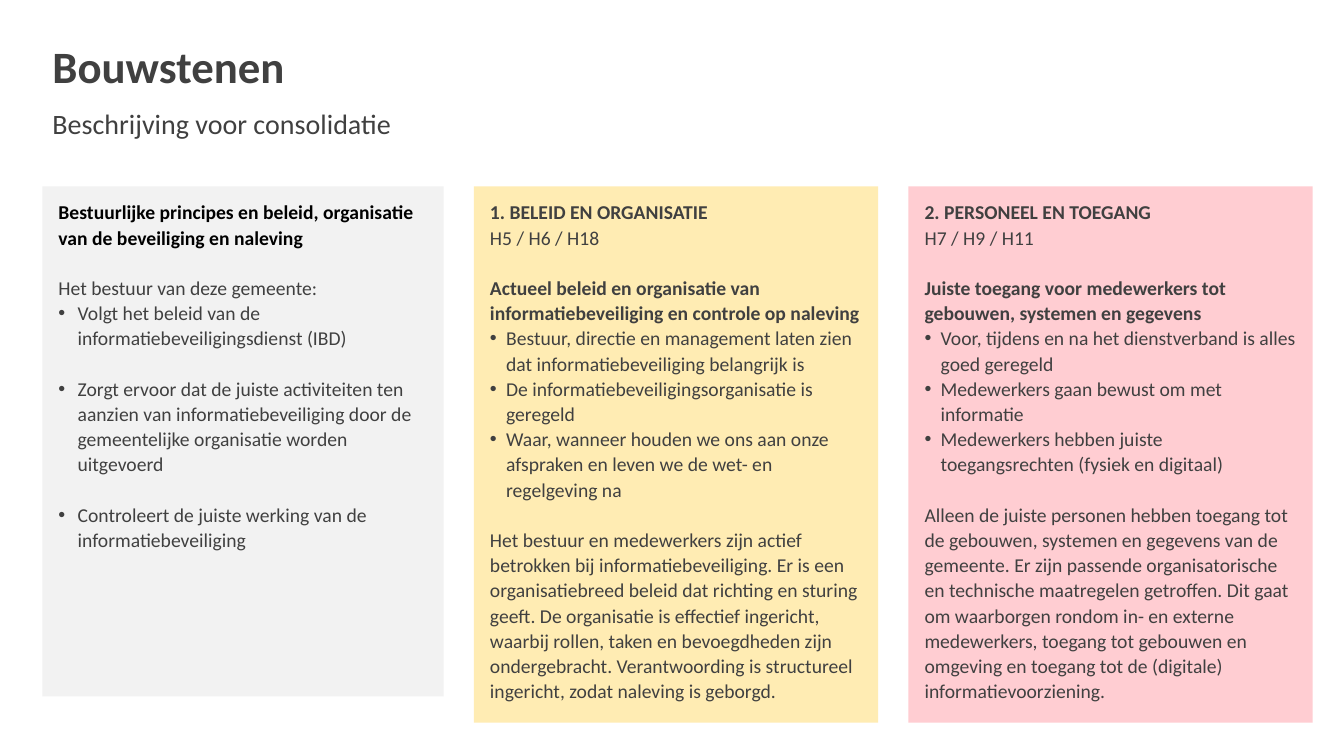
from dataclasses import dataclass

from lxml import etree
from pptx import Presentation
from pptx.dml.color import RGBColor
from pptx.enum import shapes, text
from pptx.oxml import ns
from pptx.util import Inches, Pt


@dataclass(frozen=True)
class Theme:
    font: str = "Calibri"
    ink: str = "404040"
    black: str = "000000"
    grey: str = "F2F2F2"
    yellow: str = "FFECB3"
    pink: str = "FFCDD2"
    title_size: int = 32
    subtitle_size: int = 20
    body_size: int = 14
    title_line: int = 34
    body_line: int = 18


THEME = Theme()


@dataclass(frozen=True)
class Line:
    content: str
    bold: bool = False
    bullet: bool = False
    gap_after: bool = False
    color: str = THEME.ink


@dataclass(frozen=True)
class Panel:
    fill: str
    width: float
    height: float
    bullet_indent: float
    lines: tuple[Line, ...]


PANEL_LEFT, PANEL_TOP, PANEL_GAP = 0.42, 1.85, 0.3

PANELS = (
    Panel(THEME.grey, 3.98, 5.06, 0.19, (
        Line("Bestuurlijke principes en beleid, organisatie van de beveiliging en naleving",
             bold=True, gap_after=True, color=THEME.black),
        Line("Het bestuur van deze gemeente:"),
        Line("Volgt het beleid van de informatiebeveiligingsdienst (IBD)",
             bullet=True, gap_after=True),
        Line("Zorgt ervoor dat de juiste activiteiten ten aanzien van informatiebeveiliging "
             "door de gemeentelijke organisatie worden uitgevoerd", bullet=True, gap_after=True),
        Line("Controleert de juiste werking van de informatiebeveiliging", bullet=True),
    )),
    Panel(THEME.yellow, 4.01, 5.32, 0.16, (
        Line("1. BELEID EN ORGANISATIE", bold=True),
        Line("H5 / H6 / H18", gap_after=True),
        Line("Actueel beleid en organisatie van informatiebeveiliging en controle op naleving",
             bold=True),
        Line("Bestuur, directie en management laten zien dat informatiebeveiliging belangrijk is",
             bullet=True),
        Line("De informatiebeveiligingsorganisatie is geregeld", bullet=True),
        Line("Waar, wanneer houden we ons aan onze afspraken en leven we de wet- en "
             "regelgeving na", bullet=True, gap_after=True),
        Line("Het bestuur en medewerkers zijn actief betrokken bij informatiebeveiliging. "
             "Er is een organisatiebreed beleid dat richting en sturing geeft. De organisatie "
             "is effectief ingericht, waarbij rollen, taken en bevoegdheden zijn ondergebracht. "
             "Verantwoording is structureel ingericht, zodat naleving is geborgd."),
    )),
    Panel(THEME.pink, 4.01, 5.32, 0.16, (
        Line("2. PERSONEEL EN TOEGANG", bold=True),
        Line("H7 / H9 / H11", gap_after=True),
        Line("Juiste toegang voor medewerkers tot gebouwen, systemen en gegevens", bold=True),
        Line("Voor, tijdens en na het dienstverband is alles goed geregeld", bullet=True),
        Line("Medewerkers gaan bewust om met informatie", bullet=True),
        Line("Medewerkers hebben juiste toegangsrechten (fysiek en digitaal)",
             bullet=True, gap_after=True),
        Line("Alleen de juiste personen hebben toegang tot de gebouwen, systemen en gegevens "
             "van de gemeente. Er zijn passende organisatorische en technische maatregelen "
             "getroffen. Dit gaat om waarborgen rondom in- en externe medewerkers, toegang tot "
             "gebouwen en omgeving en toegang tot de (digitale) informatievoorziening."),
    )),
)


def write_line(paragraph, line: Line, size: int, spacing: int) -> None:
    paragraph.alignment = text.PP_ALIGN.LEFT
    paragraph.line_spacing = Pt(spacing)
    paragraph.space_before = Pt(0)
    paragraph.space_after = Pt(spacing if line.gap_after else 0)
    run = paragraph.add_run()
    run.text = line.content
    run.font.name = THEME.font
    run.font.size = Pt(size)
    run.font.bold = line.bold
    run.font.color.rgb = RGBColor.from_string(line.color)


def add_bullet(paragraph, indent: float) -> None:
    properties = paragraph._p.get_or_add_pPr()
    properties.set("marL", str(Inches(indent)))
    properties.set("indent", str(-Inches(indent)))
    etree.SubElement(properties, ns.qn("a:buFont"), typeface="Arial")
    etree.SubElement(properties, ns.qn("a:buChar"), char="•")


def prepare_frame(frame) -> None:
    """Wrap text from the top at a fixed size."""
    frame.word_wrap = True
    frame.auto_size = text.MSO_AUTO_SIZE.NONE
    frame.vertical_anchor = text.MSO_ANCHOR.TOP


def next_paragraph(frame, index: int):
    return frame.add_paragraph() if index else frame.paragraphs[0]


def add_panel(slide, panel: Panel, left: float) -> None:
    shape = slide.shapes.add_shape(
        shapes.MSO_SHAPE.RECTANGLE, Inches(left), Inches(PANEL_TOP),
        Inches(panel.width), Inches(panel.height))
    shape.shadow.inherit = False
    shape.fill.solid()
    shape.fill.fore_color.rgb = RGBColor.from_string(panel.fill)
    shape.line.fill.background()
    frame = shape.text_frame
    prepare_frame(frame)
    frame.margin_left = frame.margin_right = frame.margin_bottom = Inches(0.16)
    frame.margin_top = Inches(0.12)
    for index, line in enumerate(panel.lines):
        paragraph = next_paragraph(frame, index)
        write_line(paragraph, line, THEME.body_size, THEME.body_line)
        if line.bullet:
            add_bullet(paragraph, panel.bullet_indent)


def fill_title(title) -> None:
    title.left, title.top = Inches(PANEL_LEFT), Inches(0.4)
    title.width, title.height = Inches(11.5), Inches(1.45)
    prepare_frame(title.text_frame)
    headings = (
        (Line("Bouwstenen", bold=True), THEME.title_size),
        (Line("Beschrijving voor consolidatie"), THEME.subtitle_size),
    )
    for index, (line, size) in enumerate(headings):
        write_line(next_paragraph(title.text_frame, index), line, size, THEME.title_line)


def main() -> None:
    presentation = Presentation()
    presentation.slide_width = Inches(13.33)
    presentation.slide_height = Inches(7.5)
    slide = presentation.slides.add_slide(presentation.slide_layouts.get_by_name("Title Only"))
    fill_title(slide.shapes.title)
    left = PANEL_LEFT
    for panel in PANELS:
        add_panel(slide, panel, left)
        left += panel.width + PANEL_GAP
    presentation.save("out.pptx")


if __name__ == "__main__":
    main()
